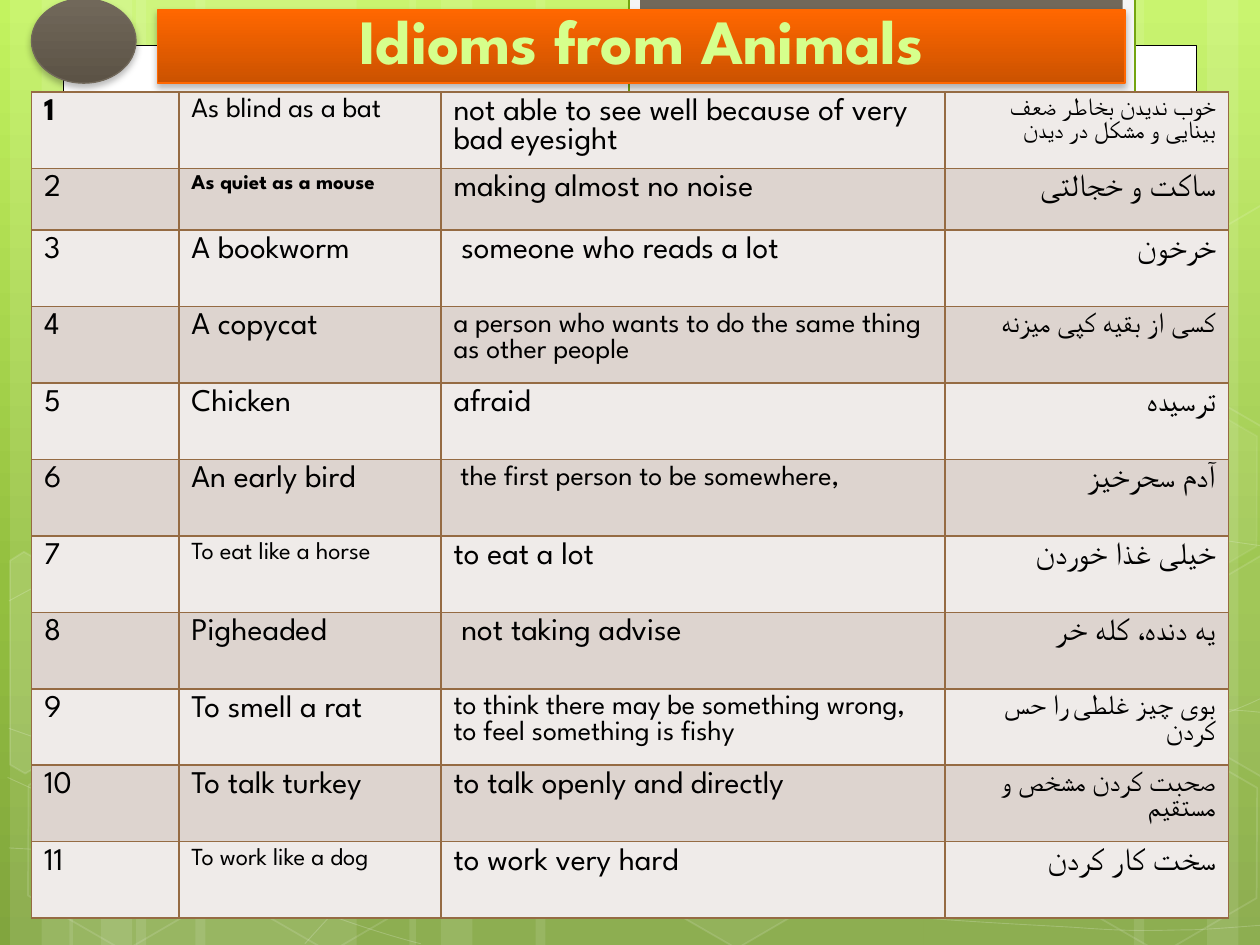
"""Build a slide with a table of animal idioms on a green hexagon background."""
from copy import deepcopy

from lxml.etree import SubElement
from pptx import Presentation
from pptx.dml.color import RGBColor
from pptx.enum.shapes import MSO_SHAPE
from pptx.enum.text import MSO_ANCHOR, PP_ALIGN
from pptx.oxml import parse_xml
from pptx.oxml.ns import nsdecls, qn
from pptx.util import Inches, Pt

WHITE = RGBColor(0xFF, 0xFF, 0xFF)
BLACK = RGBColor(0x00, 0x00, 0x00)
PALE = RGBColor(0xF5, 0xF5, 0xF5)
GREEN = RGBColor(0x74, 0xA5, 0x10)
LIME = RGBColor(0xD6, 0xFF, 0x8C)
OLIVE = RGBColor(0x43, 0x41, 0x28)
TAUPE = RGBColor(0x71, 0x68, 0x5A)
DARK_TAUPE = RGBColor(0x5C, 0x53, 0x46)
ORANGE = RGBColor(0xFF, 0x67, 0x00)
RUST = RGBColor(0xCB, 0x52, 0x00)
BROWN = RGBColor(0x95, 0x6B, 0x43)
BANDS = [RGBColor(0xEF, 0xEB, 0xE9), RGBColor(0xDD, 0xD4, 0xCF)]
SKY = [(0, RGBColor(0xC3, 0xF3, 0x5F)), (0.62, RGBColor(0x93, 0xBF, 0x3F)),
       (1, RGBColor(0x81, 0xA5, 0x3E))]
FONT = "League Spartan"

prs = Presentation()
prs.slide_width, prs.slide_height = Inches(10), Inches(7.5)
U = prs.slide_width // 10
s = prs.slides.add_slide(prs.slide_layouts[6])


def paint(fill, stops):
    fill.gradient()
    fill.gradient_angle = 270
    while len(fill.gradient_stops) < len(stops):
        gs = fill.gradient_stops[0]._gs
        gs.addnext(deepcopy(gs))
    for stop, (pos, color) in zip(fill.gradient_stops, stops):
        stop.position, stop.color.rgb = pos, color


def style(sp, fill=None, line=None, width=1, alphas=(), shadow=False):
    sp.shadow.inherit = False
    if isinstance(fill, list):
        paint(sp.fill, fill)
    elif fill is None:
        sp.fill.background()
    else:
        sp.fill.solid()
        sp.fill.fore_color.rgb = fill
    if line is None:
        sp.line.fill.background()
    else:
        sp.line.color.rgb = line
        sp.line.width = Pt(width)
    spPr = sp._element.spPr
    for clr, alpha in zip(spPr.xpath(".//a:srgbClr"), alphas):
        SubElement(clr, qn("a:alpha"), val=str(alpha * 1000))
    if shadow:
        spPr.find(qn("a:effectLst")).append(parse_xml(
            f'<a:outerShdw {nsdecls("a")} blurRad="{Pt(4)}" dist="{Pt(2)}" dir="5400000" rotWithShape="0">'
            '<a:srgbClr val="000000"><a:alpha val="28000"/></a:srgbClr></a:outerShdw>'))


paint(s.background.fill, SKY)

stripes = [(1.08, 1.75), (0.08, 0.5), (0.33, 0.83), (1.55, 1.75), (0.55, 0.5), (0.8, 0.83),
           (7.33, 1.75), (9.58, 0.5), (9, 0.83), (4.25, 3.08), (3.25, 0.5), (3.5, 0.83)]
for x, w in stripes:
    sp = s.shapes.add_shape(MSO_SHAPE.RECTANGLE, int(x * U), 0, int(w * U), prs.slide_height)
    style(sp, WHITE, alphas=[10])

curves = [
    [(0.07, 6.73), (0.61, 6.76), (1.15, 6.79), (1.9, 6.78), (2.65, 6.77), (3.58, 6.75), (4.58, 6.65),
     (5.58, 6.55), (7, 6.36), (7.92, 6.17), (8.83, 5.98), (9.77, 5.68), (10.07, 5.51)],
    [(0.07, 4.77), (0.36, 4.61), (0.65, 4.46), (1.21, 4.31), (1.78, 4.16), (2.59, 3.94), (3.47, 3.87),
     (4.36, 3.8), (5.44, 3.79), (6.54, 3.87), (7.64, 3.95), (9.47, 4.26), (10.07, 4.34)],
    [(0.06, 6.17), (1.27, 6.72), (2.47, 7.27), (3.34, 7.49)],
    [(0.07, 5.78), (0.38, 5.89), (0.7, 6), (1.28, 6.16), (1.86, 6.31), (2.73, 6.56), (3.57, 6.73),
     (4.4, 6.9), (5.45, 7.08), (6.28, 7.18), (7.11, 7.29), (8, 7.33), (8.53, 7.36),
     (9.05, 7.4), (9.19, 7.38), (9.45, 7.38), (9.71, 7.37), (9.89, 7.35), (10.07, 7.34)],
    [(2.42, 7.49), (2.6, 7.29), (2.78, 7.09), (3.02, 6.91), (3.26, 6.73), (3.6, 6.53), (3.88, 6.39),
     (4.16, 6.25), (4.33, 6.19), (4.7, 6.09), (5.06, 5.99), (5.73, 5.85), (6.08, 5.78),
     (6.44, 5.71), (6.49, 5.71), (6.8, 5.69), (7.11, 5.66), (7.6, 5.63), (7.94, 5.62),
     (8.29, 5.61), (8.86, 5.62), (8.86, 5.62), (9.08, 5.62), (9.31, 5.62), (9.53, 5.62),
     (9.71, 5.63), (9.88, 5.64), (9.97, 5.65), (10.06, 5.66), (10.03, 5.65), (10.06, 5.66)],
]
for pts in curves:
    pts = [(x * U, y * U) for x, y in pts]
    fb = s.shapes.build_freeform(*pts[0])
    fb.add_line_segments(pts[1:], close=False)
    sp = fb.convert_to_shape()
    steps = sp._element.spPr.xpath(".//a:lnTo")
    for i in range(0, len(steps), 3):
        bend = parse_xml(f'<a:cubicBezTo {nsdecls("a")}/>')
        steps[i].addprevious(bend)
        for step in steps[i:i + 3]:
            bend.append(step[0])
            step.getparent().remove(step)
    style(sp, None, WHITE, 0.5, [20])

hexagons = [(3.34, 0.36, 4, 8), (4.97, 5.89, 6, 12), (0.11, 5.91, 0, 12), (0.14, 3.12, 7, 8),
            (1.74, 5.92, 0, 12), (7.53, 4.53, 10, 12), (8.34, 5.93, 0, 12), (8.34, 3.14, 7, 8)]
for x, y, alpha, edge in hexagons:
    sp = s.shapes.add_shape(MSO_SHAPE.HEXAGON, int(x * U), int(y * U), int(1.75 * U), int(1.52 * U))
    sp.adjustments[0] = 0.285
    sp.rotation = 30
    style(sp, WHITE if alpha else None, WHITE, 1, [alpha, edge] if alpha else [edge])

right_cut = [(9.26, 4.85), (10.01, 4.41), (10.09, 4.46), (10.09, 6.13), (10.02, 6.17), (9.26, 5.73)]
left_cut = [(0.08, 4.45), (0.19, 4.38), (0.96, 4.82), (0.95, 5.7), (0.2, 6.14), (0.08, 6.07)]
cut_hexagons = [(left_cut, 0, 10), (right_cut, 0, 4), (right_cut, 2.78, 0)]
for pts, rise, alpha in cut_hexagons:
    pts = [(x * U, (y - rise) * U) for x, y in pts]
    fb = s.shapes.build_freeform(*pts[0])
    fb.add_line_segments(pts[1:], close=True)
    style(fb.convert_to_shape(), WHITE if alpha else None, WHITE, 1, [alpha, 12] if alpha else [12])

panels = [
    (MSO_SHAPE.RECTANGLE, (0.5, 0.36, 9, 6.76), dict(fill=WHITE, line=BLACK, width=0.5)),
    (MSO_SHAPE.RECTANGLE, (4.99, -0.02, 4.02, 0.76), dict(fill=PALE, line=GREEN, width=1.25)),
    (MSO_SHAPE.RECTANGLE, (5.08, -0.02, 3.83, 0.68), dict(fill=TAUPE)),
    (MSO_SHAPE.RECTANGLE, (1.25, 0.08, 7.68, 0.58),
     dict(fill=[(0, ORANGE), (1, RUST)], line=ORANGE, width=0.75, shadow=True)),
    (MSO_SHAPE.OVAL, (0.25, -0.01, 0.83, 0.67),
     dict(fill=[(0, TAUPE), (1, DARK_TAUPE)], line=TAUPE, width=0.75, shadow=True)),
]
for kind, box, look in panels:
    sp = s.shapes.add_shape(kind, *[int(v * U) for v in box])
    style(sp, **look)
    if look["fill"][0] == (0, ORANGE):
        tf = sp.text_frame
        tf.word_wrap, tf.vertical_anchor = True, MSO_ANCHOR.BOTTOM
        p = tf.paragraphs[0]
        p.alignment = PP_ALIGN.CENTER
        r = p.add_run()
        r.text = "Idioms from Animals"
        for key, value in dict(name=FONT, size=Pt(36), bold=True).items():
            setattr(r.font, key, value)
        r.font.color.rgb = LIME
        r._r.rPr.insert(0, parse_xml(
            f'<a:ln {nsdecls("a")} w="{Pt(1)}"><a:solidFill><a:srgbClr val="{OLIVE}"/></a:solidFill></a:ln>'))

idioms = [
    ("As blind as a bat", 16, "not able to see well because of very bad eyesight", 18,
     "خوب ندیدن بخاطر ضعف بینایی و مشکل در دیدن", 14),
    ("As quiet as a mouse", 12, "making almost no noise", 18, "ساکت و خجالتی", 18),
    ("A bookworm", 18, " someone who reads a lot", 18, "خرخون", 18),
    ("A copycat", 18, "a person who wants to do the same thing as other people", 16, "کسی از بقیه کپی میزنه", 16),
    ("Chicken", 18, "afraid", 18, "ترسیده", 18),
    ("An early bird", 18, " the first person to be somewhere,", 16, "آدم سحرخیز", 18),
    ("To eat like a horse", 14, "to eat a lot", 18, "خیلی غذا خوردن", 18),
    ("Pigheaded", 18, " not taking advise", 18, "یه دنده، کله خر", 18),
    ("To smell a rat", 18, "to think there may be something wrong, to feel something is fishy", 16,
     "بوی چیز غلطی را حس کردن", 16),
    ("To talk turkey", 18, "to talk openly and directly", 18, "صحبت کردن مشخص و مستقیم", 16),
    ("To work like a dog", 14, "to work very hard", 18, "سخت کار کردن", 18),
]
height, short_row = 6.56, 0.49
tall_row = (height - short_row) / (len(idioms) - 1)
box = [int(v * U) for v in (0.25, 0.73, 9.5, height)]
tbl = s.shapes.add_table(len(idioms), 4, *box).table
tbl.first_row = False
for col, w in zip(tbl.columns, (1.17, 2.08, 4, 2.25)):
    col.width = int(w * U)
for i, (idiom, size, meaning, meaning_size, persian, persian_size) in enumerate(idioms):
    tbl.rows[i].height = int((short_row if i == 1 else tall_row) * U)
    entries = [(str(i + 1), 18), (idiom, size), (meaning, meaning_size), (persian, persian_size)]
    for j, (text, pts) in enumerate(entries):
        cell = tbl.cell(i, j)
        cell.fill.solid()
        cell.fill.fore_color.rgb = BANDS[i % 2]
        for n, side in enumerate("LRTB"):
            cell._tc.tcPr.insert(n, parse_xml(
                f'<a:ln{side} {nsdecls("a")} w="{Pt(1)}"><a:solidFill><a:srgbClr val="{BROWN}"/>'
                f'</a:solidFill></a:ln{side}>'))
        p = cell.text_frame.paragraphs[0]
        p.alignment = PP_ALIGN.RIGHT if j == 3 else PP_ALIGN.LEFT
        r = p.add_run()
        r.text = text
        for key, value in dict(name=FONT, size=Pt(pts), bold=(i, j) in [(0, 0), (1, 1)]).items():
            setattr(r.font, key, value)
        r.font.color.rgb = BLACK
        SubElement(r._r.rPr, qn("a:cs"), typeface=FONT)

prs.save("out.pptx")
